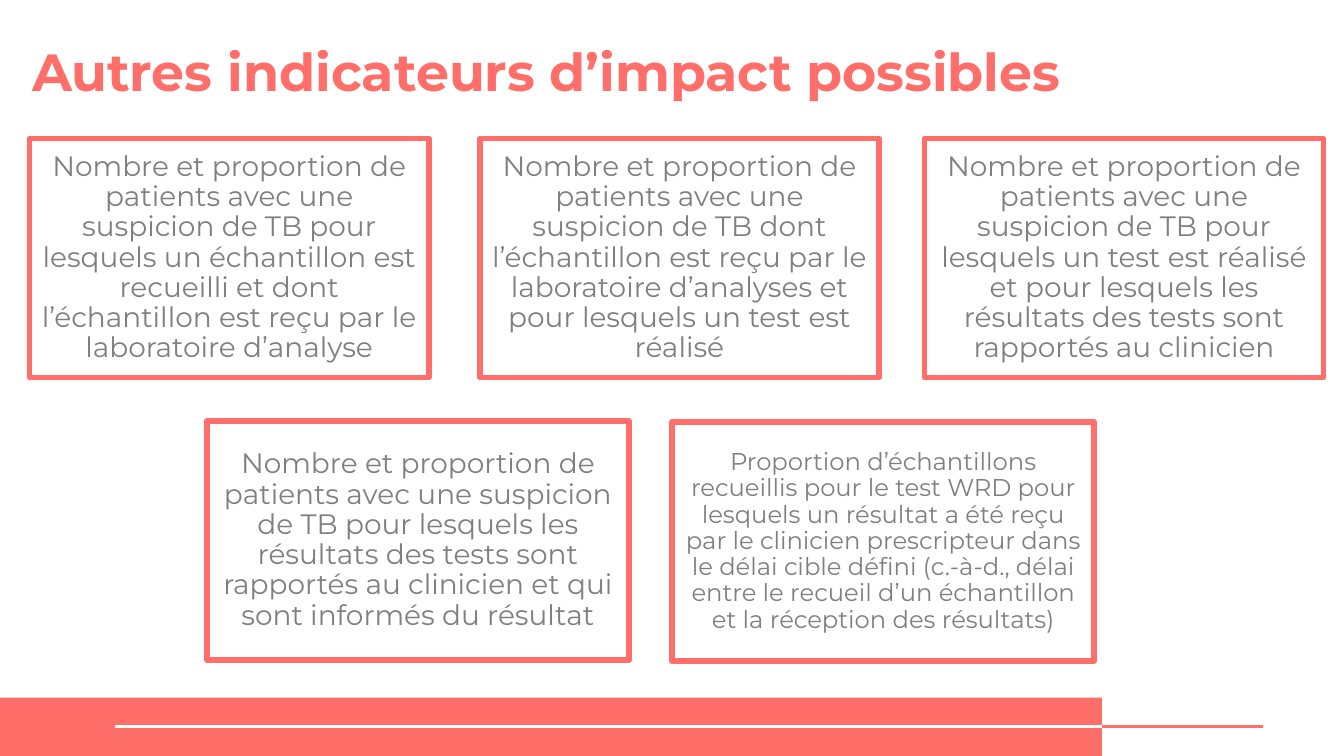
from pptx import Presentation
from pptx.dml.color import RGBColor
from pptx.enum.shapes import MSO_CONNECTOR, MSO_SHAPE
from pptx.enum.text import MSO_ANCHOR, PP_ALIGN
from pptx.oxml.ns import qn
from pptx.util import Pt
from lxml import etree

CORAL = RGBColor(0xFF, 0x6E, 0x68)
WHITE = RGBColor(0xFF, 0xFF, 0xFF)
GRAY = RGBColor(0x7F, 0x7F, 0x7F)
FONT = "Montserrat"

TITLE = "Autres indicateurs d’impact possibles"
PATIENTS = "Nombre et proportion de patients avec une suspicion de TB "
TOP_WIDTH, BOTTOM_WIDTH, CARD_HEIGHT = 213.84, 226.08, 128.16

# left, top, width, font size, text
INDICATORS = [
    (15.9, 74.16, TOP_WIDTH, 15, PATIENTS + "pour lesquels un échantillon est "
     "recueilli et dont l’échantillon est reçu par le laboratoire d’analyse"),
    (257.1, 74.16, TOP_WIDTH, 15, PATIENTS + "dont l’échantillon est reçu par le "
     "laboratoire d’analyses et pour lesquels un test est réalisé"),
    (495.3, 74.16, TOP_WIDTH, 15, PATIENTS + "pour lesquels un test est réalisé et "
     "pour lesquels les résultats des tests sont rapportés au clinicien"),
    (110.9, 225.4, BOTTOM_WIDTH, 15, PATIENTS + "pour lesquels les résultats des "
     "tests sont rapportés au clinicien et qui sont informés du résultat"),
    (360, 226, BOTTOM_WIDTH, 13, "Proportion d’échantillons recueillis pour le test "
     "WRD pour lesquels un résultat a été reçu par le clinicien prescripteur dans le "
     "délai cible défini (c.-à-d., délai entre le recueil d’un échantillon et la "
     "réception des résultats)"),
]


def add_rectangle(page, left, top, width, height, fill):
    box = page.shapes.add_shape(
        MSO_SHAPE.RECTANGLE, Pt(left), Pt(top), Pt(width), Pt(height))
    box.shadow.inherit = False
    box.fill.solid()
    box.fill.fore_color.rgb = fill
    return box


def set_text(box, text, size, color, inset):
    frame = box.text_frame
    frame.word_wrap = True
    frame.margin_left = frame.margin_right = Pt(inset)
    frame.margin_top = frame.margin_bottom = Pt(inset)
    para = frame.paragraphs[0]
    para.text = text
    para.font.name = FONT
    para.font.size = Pt(size)
    para.font.color.rgb = color
    return para


def add_rule(page, start, end, y, color):
    rule = page.shapes.add_connector(
        MSO_CONNECTOR.STRAIGHT, Pt(start), Pt(y), Pt(end), Pt(y))
    rule.line.color.rgb = color
    rule.line.width = Pt(1.5)
    etree.SubElement(rule._element.spPr, qn("a:effectLst"))


def add_footer(page, left, top, width, height):
    """Draw the band and the rule that turns coral past its right edge."""
    band = add_rectangle(page, left, top, width, height, CORAL)
    band.line.fill.background()
    middle = top + height / 2
    right = left + width
    add_rule(page, right + 4.3, left + 61.5, middle, WHITE)
    add_rule(page, right + 86.4, right, middle, CORAL)


def add_title(page, left, top, width, height):
    box = page.shapes.add_textbox(Pt(left), Pt(top), Pt(width), Pt(height))
    para = set_text(box, TITLE, 28, CORAL, 7.2)
    para.font.bold = True


def add_indicator(page, left, top, width, height, size, text):
    card = add_rectangle(page, left, top, width, height, WHITE)
    card.line.color.rgb = CORAL
    card.line.width = Pt(3)
    para = set_text(card, text, size, GRAY, 4.5)
    card.text_frame.vertical_anchor = MSO_ANCHOR.MIDDLE
    para.alignment = PP_ALIGN.CENTER
    para.line_spacing = 0.9


def main():
    deck = Presentation()
    deck.slide_width, deck.slide_height = Pt(720), Pt(405)
    page = deck.slides.add_slide(deck.slide_layouts[6])
    add_footer(page, 0, 373.8, 590.4, 31.2)
    add_title(page, 10.1, 13.7, 638.6, 45.4)
    for left, top, width, size, text in INDICATORS:
        add_indicator(page, left, top, width, CARD_HEIGHT, size, text)
    deck.save("out.pptx")


if __name__ == "__main__":
    main()
